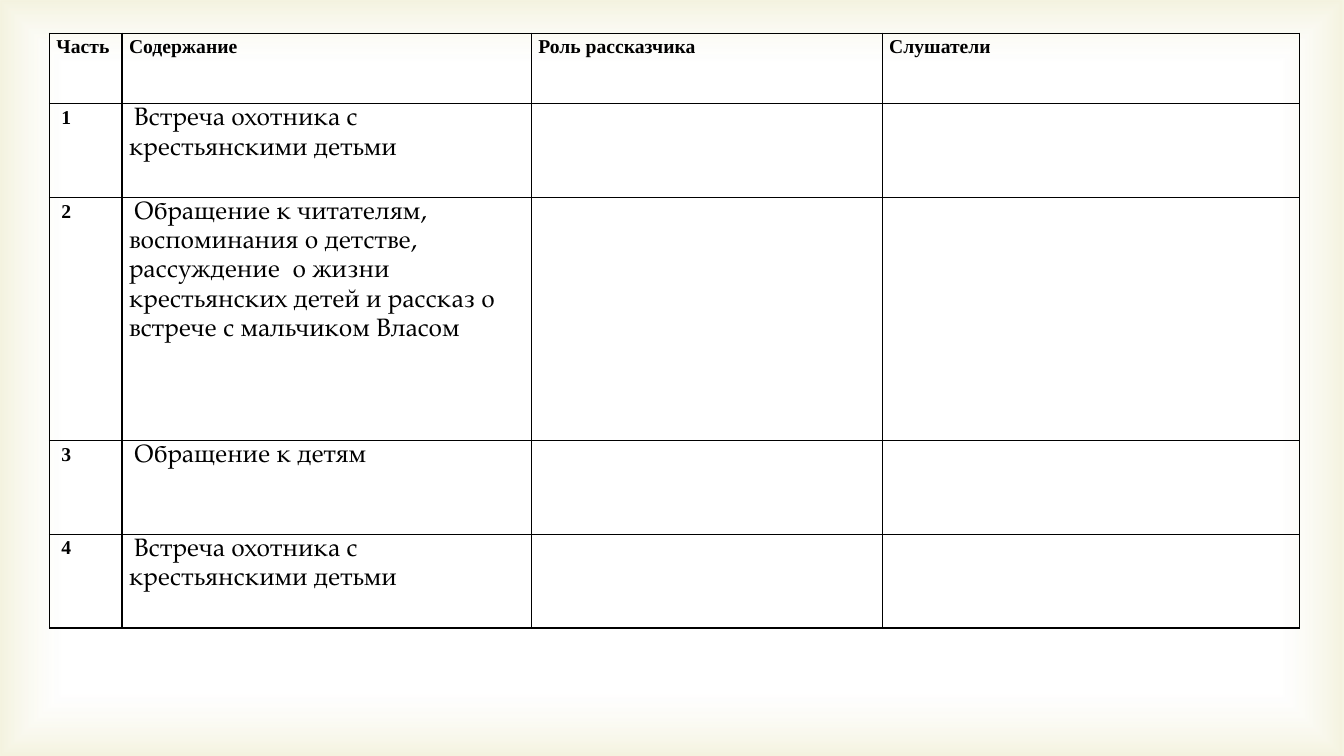
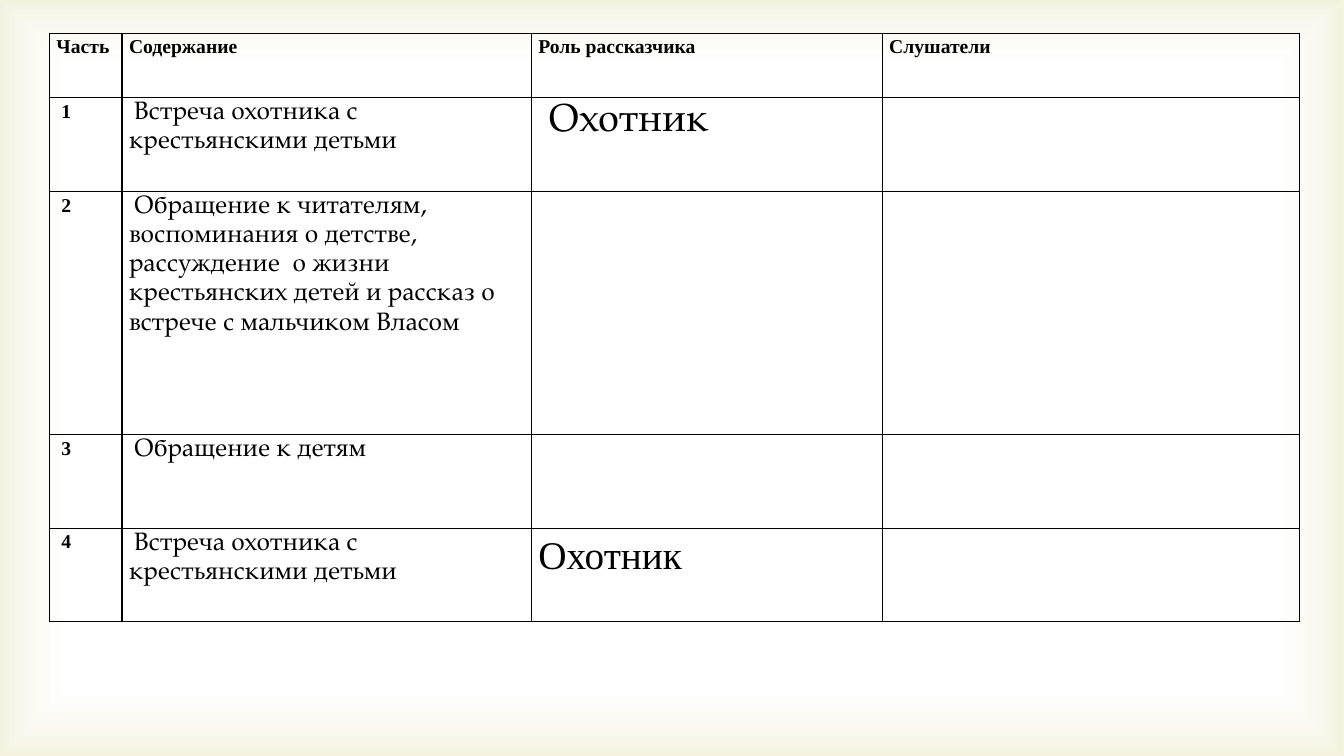
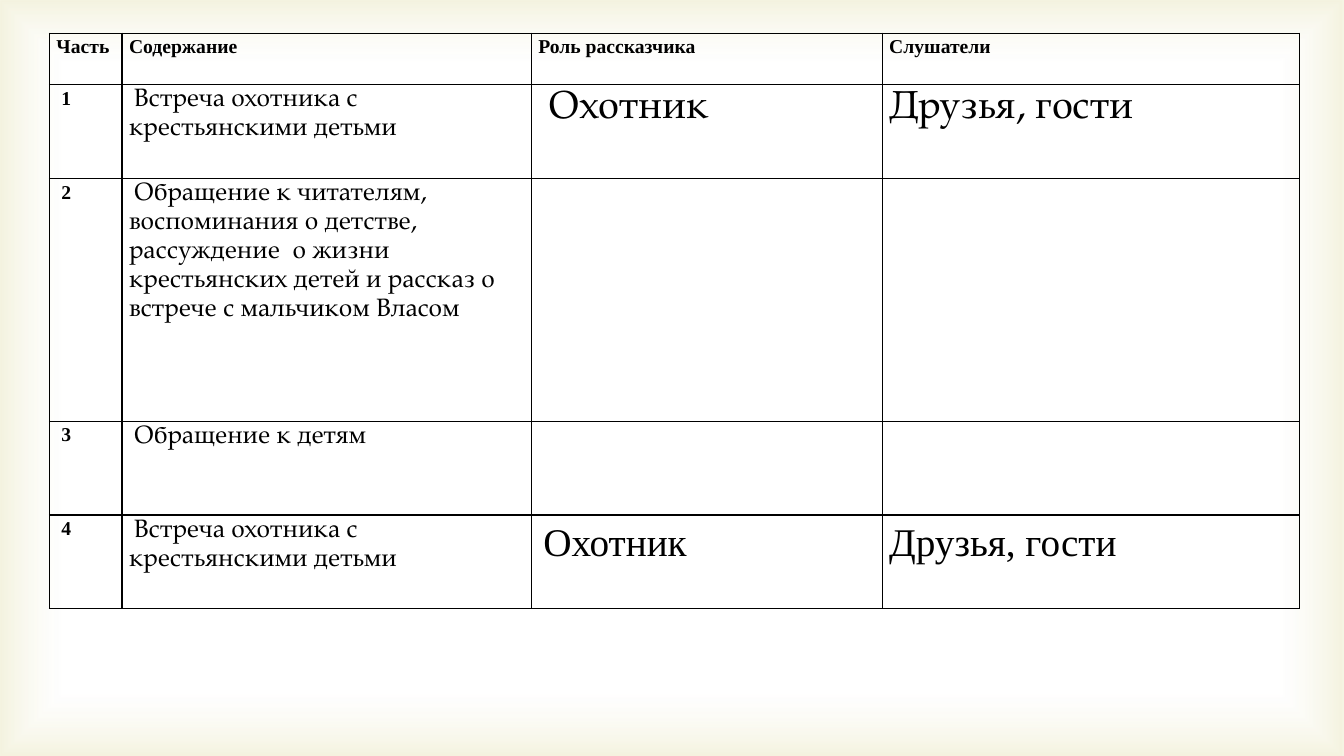
from lxml import etree
from pptx import Presentation
from pptx import util as u
from pptx.dml import color
from pptx.enum import shapes
from pptx.oxml import ns

COLORS = {"ink": "000000", "paper": "FFFFFF", "glow": "D1CA75"}
SERIF, TIMES = "TeX Gyre Pagella", "Times New Roman"
STYLES = {
    "label": (TIMES, 14, True),
    "lead": (SERIF, 14, True),
    "body": (SERIF, 18, False),
    "big_lead": (SERIF, 28, True),
    "big": (SERIF, 28, False),
    "big_times": (TIMES, 28, False),
}
COLUMN_WIDTHS = [0.72, 4.06, 3.48, 4.14]
PART_HEIGHTS = [0.93, 2.41, 0.93, 0.93]
HEADINGS = ["Часть", "Содержание", "Роль рассказчика", "Слушатели"]
MEETING = "Встреча охотника с крестьянскими детьми"
CONTENTS = [
    MEETING,
    "Обращение к читателям, воспоминания о детстве, рассуждение  о жизни "
    "крестьянских детей и рассказ о встрече с мальчиком Власом",
    "Обращение к детям",
    MEETING,
]
NBSP = " "
HUNTER, GUESTS = "Охотник", "Друзья, гости"
FIRST_HUNTER = [(NBSP, "big_lead"), (HUNTER, "big")]


def add_element(parent, tag, **attributes):
    return etree.SubElement(parent, ns.qn(tag), attributes)


class Deck:
    def __init__(self):
        self.presentation = Presentation()
        self.presentation.slide_width = u.Inches(13.33)
        self.presentation.slide_height = u.Inches(7.5)
        self.slide = None

    def add_slide(self):
        self.slide = self.presentation.slides.add_slide(self.presentation.slide_layouts[6])

    def add_master_glow(self):
        shape = self.slide.shapes.add_shape(
            shapes.MSO_SHAPE.RECTANGLE, 0, 0,
            self.presentation.slide_width, self.presentation.slide_height)
        shape.shadow.inherit = False
        shape.line.fill.background()
        shape.fill.background()
        properties = shape.element.spPr
        gradient = etree.Element(ns.qn("a:gradFill"), rotWithShape="1")
        stops = add_element(gradient, "a:gsLst")
        for position, name, opacity in [(83, "paper", 11), (100, "glow", 23)]:
            stop = add_element(stops, "a:gs", pos=str(position * 1000))
            tint = add_element(stop, "a:srgbClr", val=COLORS[name])
            add_element(tint, "a:alpha", val=str(opacity * 1000))
        route = add_element(gradient, "a:path", path="rect")
        add_element(route, "a:fillToRect", l="50000", t="50000", r="50000", b="50000")
        properties.replace(properties.find(ns.qn("a:noFill")), gradient)
        self.presentation.slide_master.shapes.element.insert(2, shape.element)

    def style_font(self, font, style):
        font.name, size, font.bold = STYLES[style]
        font.size = u.Pt(size)
        font.color.rgb = color.RGBColor.from_string(COLORS["ink"])

    def fill_cell(self, cell, pieces):
        cell.margin_left = cell.margin_right = u.Inches(0.07)
        cell.margin_top = cell.margin_bottom = 0
        properties = cell._tc.get_or_add_tcPr()
        for side in "LRTB":
            line = add_element(properties, f"a:ln{side}", w=str(u.Pt(1)))
            fill = add_element(line, "a:solidFill")
            add_element(fill, "a:srgbClr", val=COLORS["ink"])
        cell.fill.background()
        paragraph = cell.text_frame.paragraphs[0]
        paragraph.line_spacing = 1.15
        for text, style in pieces:
            run = paragraph.add_run()
            run.text = text
            self.style_font(paragraph.font if len(pieces) == 1 else run.font, style)

    def add_table(self, rows, heights):
        frame = self.slide.shapes.add_table(
            len(rows), len(COLUMN_WIDTHS), u.Inches(0.49), u.Inches(0.33),
            u.Inches(sum(COLUMN_WIDTHS)), u.Inches(sum(heights)))
        table = frame.table
        table.first_row = table.horz_banding = False
        for column, width in zip(table.columns, COLUMN_WIDTHS):
            column.width = u.Inches(width)
        for row, height, contents in zip(table.rows, heights, rows):
            row.height = u.Inches(height)
            for cell, pieces in zip(row.cells, contents):
                self.fill_cell(cell, pieces)

    def add_parts_table(self, header_height, answers):
        rows = [[[(heading, "label")] for heading in HEADINGS]]
        for number, content in enumerate(CONTENTS, 1):
            role, listeners = answers.get(number, ([], []))
            rows.append([
                [(f"{NBSP}{number}", "label")],
                [(NBSP, "lead"), (content, "body")],
                role,
                listeners,
            ])
        self.add_table(rows, [header_height] + PART_HEIGHTS)


def main():
    deck = Deck()
    tables = [
        (0.7, {}),
        (0.64, {1: (FIRST_HUNTER, []), 4: ([(HUNTER, "big_times")], [])}),
        (0.51, {
            1: (FIRST_HUNTER, [(GUESTS, "big")]),
            4: ([(NBSP, "lead"), (HUNTER, "big_times")], [(GUESTS, "big_times")]),
        }),
    ]
    for index, (header_height, answers) in enumerate(tables):
        deck.add_slide()
        if index == 0:
            deck.add_master_glow()
        deck.add_parts_table(header_height, answers)
    deck.presentation.save("out.pptx")


if __name__ == "__main__":
    main()
